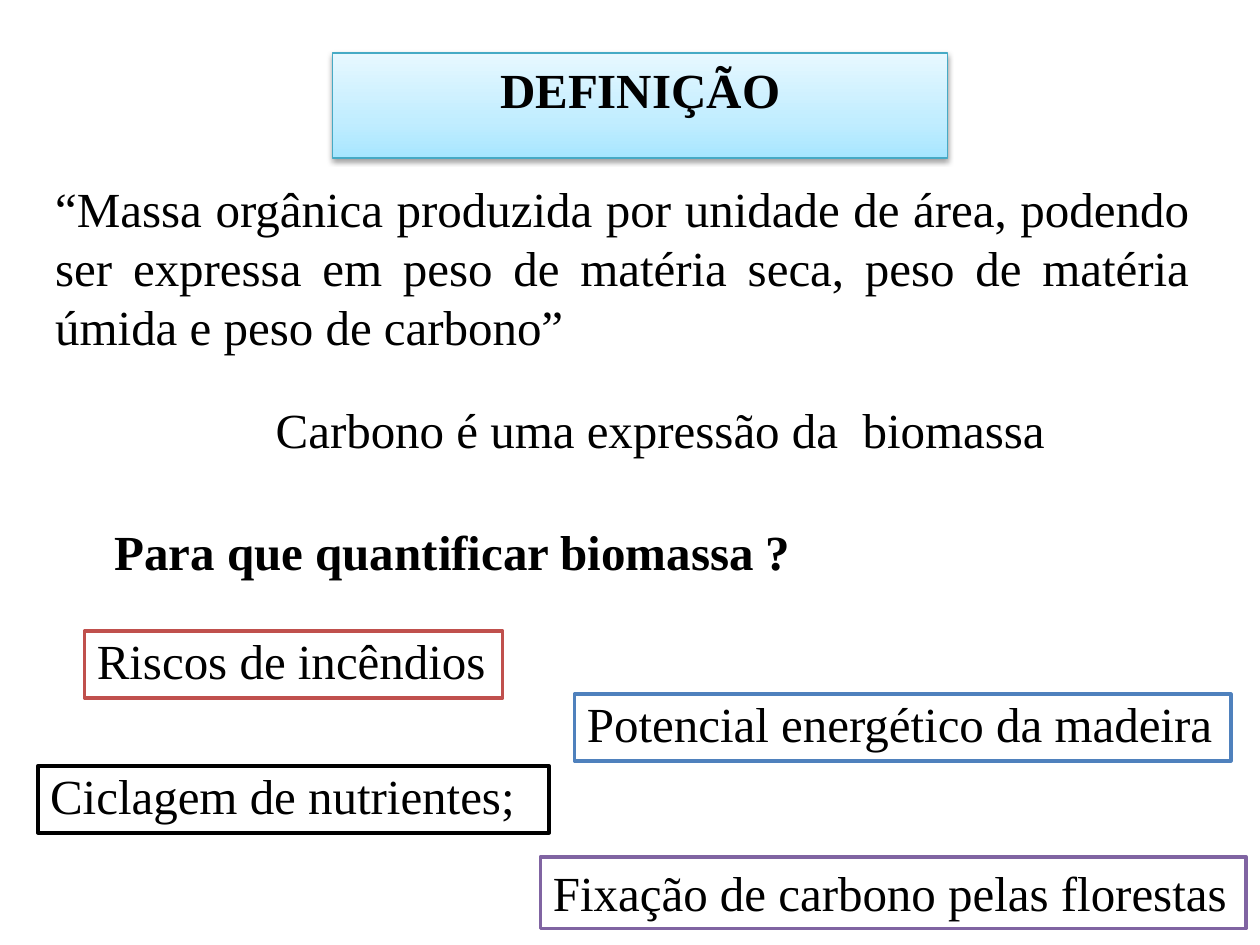
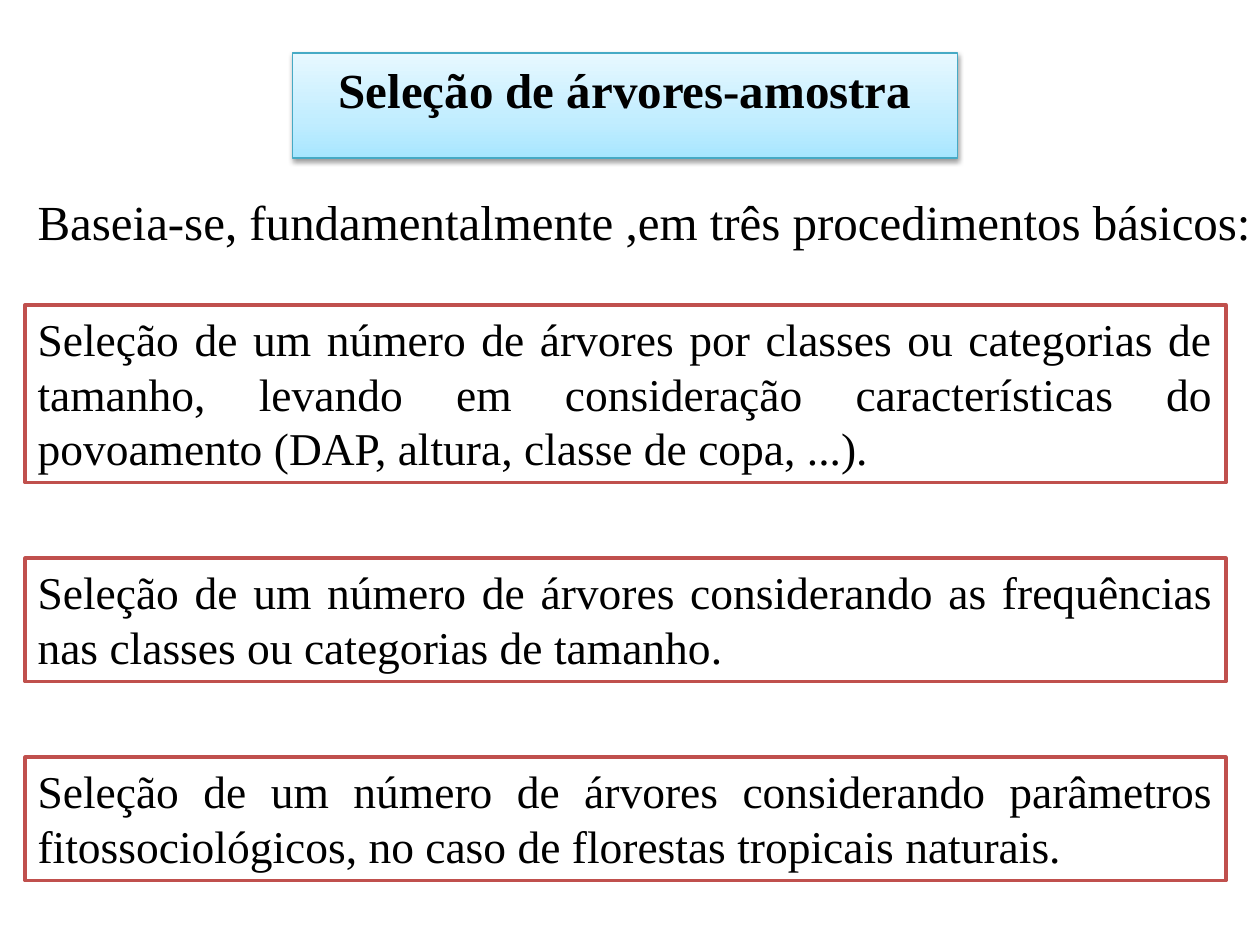
from pptx import Presentation
from pptx.dml.color import RGBColor
from pptx.enum.shapes import MSO_SHAPE
from pptx.enum.text import MSO_ANCHOR, MSO_AUTO_SIZE, PP_ALIGN
from pptx.oxml import parse_xml
from pptx.oxml.ns import nsdecls
from pptx.util import Inches, Pt

FONT = "Times New Roman"
COLORS = {
    "text": "000000",
    "paper": "FFFFFF",
    "red": "C0504D",
    "blue": "4F81BD",
    "black": "000000",
    "purple": "8064A2",
    "band_line": "46AAC5",
    "shadow": "000000",
}
BAND_STOPS = [(0, "A7E6FF"), (35, "C1EDFF"), (100, "E7F8FF")]
BAND_TOP, BAND_HEIGHT = 0.42, 0.57


def rgb(name):
    return RGBColor.from_string(COLORS[name])


def write(shape, text, size=28, bold=False, align=PP_ALIGN.LEFT,
          spacing=1.0, wrap=True, anchor=MSO_ANCHOR.TOP):
    """Fill a shape with one formatted paragraph."""
    frame = shape.text_frame
    frame.word_wrap = wrap
    frame.auto_size = MSO_AUTO_SIZE.SHAPE_TO_FIT_TEXT
    frame.vertical_anchor = anchor
    paragraph = frame.paragraphs[0]
    paragraph.alignment = align
    paragraph.line_spacing = spacing
    run = paragraph.add_run()
    run.text = text
    run.font.name = FONT
    run.font.size = Pt(size)
    run.font.bold = bold
    run.font.color.rgb = rgb("text")


def add_text(slide, box, text, **style):
    write(slide.shapes.add_textbox(*map(Inches, box)), text, **style)


def add_framed_text(slide, box, text, outline, **style):
    frame = slide.shapes.add_shape(MSO_SHAPE.RECTANGLE, *map(Inches, box))
    frame.shadow.inherit = False
    frame.fill.solid()
    frame.fill.fore_color.rgb = rgb("paper")
    frame.line.color.rgb = rgb(outline)
    frame.line.width = Pt(2)
    write(frame, text, **style)


def add_titled_slide(prs, title, left, width):
    """Title Only slide whose title is a shaded gradient band."""
    slide = prs.slides.add_slide(prs.slide_layouts[5])
    band = slide.shapes.title
    band.left, band.top = Inches(left), Inches(BAND_TOP)
    band.width, band.height = Inches(width), Inches(BAND_HEIGHT)
    properties = band.element.spPr
    stops = "".join(
        f'<a:gs pos="{position * 1000}"><a:srgbClr val="{color}"/></a:gs>'
        for position, color in BAND_STOPS)
    properties.append(parse_xml(
        f'<a:gradFill {nsdecls("a")} rotWithShape="1"><a:gsLst>{stops}</a:gsLst>'
        '<a:lin ang="16200000" scaled="0"/></a:gradFill>'))
    band.line.color.rgb = rgb("band_line")
    band.line.width = Pt(0.75)
    properties.append(parse_xml(
        f'<a:effectLst {nsdecls("a")}><a:outerShdw blurRad="40000" dist="20000" '
        f'dir="5400000" rotWithShape="0"><a:srgbClr val="{COLORS["shadow"]}">'
        '<a:alpha val="38000"/></a:srgbClr></a:outerShdw></a:effectLst>'))
    write(band, title, bold=True, align=PP_ALIGN.CENTER)
    return slide


def add_definition(slide, left, top, width):
    add_text(slide, (left, top, width, 1.51),
             "“Massa orgânica produzida por unidade de área, podendo ser expressa "
             "em peso de matéria seca, peso de matéria úmida e peso de carbono”",
             align=PP_ALIGN.JUSTIFY)
    add_text(slide, (left + 1.75, top + 1.75, 6.37, 0.57),
             "Carbono é uma expressão da  biomassa", wrap=False)


def add_reasons(slide, left, top):
    """Question followed by the scattered, framed answers."""
    add_text(slide, (left + 0.51, top, 5.68, 0.53),
             "Para que quantificar biomassa ?", bold=True, spacing=0.9)
    reasons = [
        (0.37, 0.87, 3.32, 0.53, "Riscos de incêndios", "red", 0.9),
        (4.26, 1.37, 5.21, 0.53, "Potencial energético da madeira", "blue", 0.9),
        (0, 1.94, 4.06, 0.53, "Ciclagem de nutrientes;", "black", 0.9),
        (3.99, 2.66, 5.6, 0.57, "Fixação de carbono pelas florestas", "purple", 1.0),
    ]
    for dx, dy, width, height, reason, outline, spacing in reasons:
        add_framed_text(slide, (left + dx, top + dy, width, height), reason,
                        outline, spacing=spacing, wrap=False)


def add_procedures(slide, left, top, width, gap=0.6):
    """Stack of framed procedures, each as tall as its line count needs."""
    procedures = [
        (3, "Seleção de um número de árvores por classes ou categorias de tamanho, "
            "levando em consideração características do povoamento (DAP, altura, "
            "classe de copa, ...)."),
        (2, "Seleção de um número de árvores considerando as frequências nas "
            "classes ou categorias de tamanho."),
        (2, "Seleção de um número de árvores considerando parâmetros "
            "fitossociológicos, no caso de florestas tropicais naturais."),
    ]
    for lines, procedure in procedures:
        height = 0.12 + 0.43 * lines
        add_framed_text(slide, (left, top, width, height), procedure, "red",
                        size=26, align=PP_ALIGN.JUSTIFY)
        top += height + gap


def main():
    prs = Presentation()
    prs.slide_width, prs.slide_height = Inches(10), Inches(7.5)

    # Definition of biomass and reasons to quantify it
    definition = add_titled_slide(prs, "DEFINIÇÃO", 2.64, 4.88)
    add_definition(definition, 0.34, 1.37, 9.2)
    add_reasons(definition, 0.3, 4.14)

    # Selection of sample trees
    selection = add_titled_slide(prs, "Seleção de árvores-amostra", 2.32, 5.28)
    add_text(selection, (0.2, 1.47, 9.92, 0.57),
             "Baseia-se, fundamentalmente ,em três procedimentos básicos:")
    add_procedures(selection, 0.2, 2.42, 9.53)

    prs.save("out.pptx")


if __name__ == "__main__":
    main()
